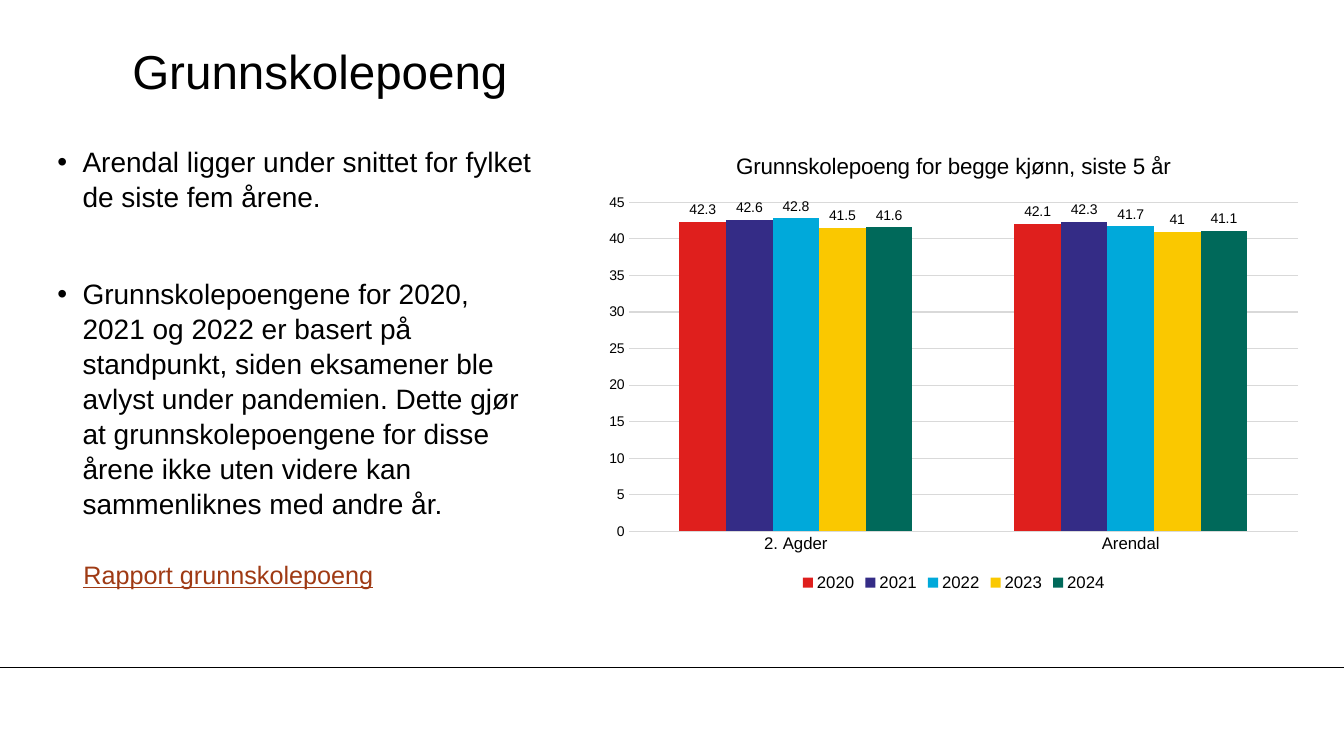
from lxml.etree import SubElement
from pptx import Presentation
from pptx.chart.data import CategoryChartData
from pptx.dml.color import RGBColor
from pptx.enum.chart import XL_CHART_TYPE, XL_LABEL_POSITION, XL_LEGEND_POSITION, XL_TICK_MARK
from pptx.enum.shapes import MSO_CONNECTOR
from pptx.enum.text import MSO_ANCHOR
from pptx.oxml.ns import qn
from pptx.util import Pt

FONT = "Arial"
COLOURS = {"text": "000000", "link": "9F3A14", "grid": "D9D9D9"}
YEARS = {
    "2020": ("DF1F1D", (42.3, 42.1)),
    "2021": ("342C86", (42.6, 42.3)),
    "2022": ("00A9DA", (42.8, 41.7)),
    "2023": ("FAC800", (41.5, 41)),
    "2024": ("00695A", (41.6, 41.1)),
}
BULLETS = (
    "Arendal ligger under snittet for fylket de siste fem årene.",
    "Grunnskolepoengene for 2020, 2021 og 2022 er basert på standpunkt, siden "
    "eksamener ble avlyst under pandemien. Dette gjør at grunnskolepoengene for "
    "disse årene ikke uten videre kan sammenliknes med andre år.",
)


def style_font(font, size, colour="text"):
    """Set the typeface, size and colour of a font."""
    font.name = FONT
    font.size = Pt(size)
    font.color.rgb = RGBColor.from_string(COLOURS[colour])


def style_line(line):
    """Give a chart line the thin grid colour."""
    line.color.rgb = RGBColor.from_string(COLOURS["grid"])
    line.width = Pt(0.75)


def add_box(page, left, top, width, height, margins=(0, 0)):
    """Add a wrapping text box with horizontal and vertical margins."""
    frame = page.shapes.add_textbox(Pt(left), Pt(top), Pt(width), Pt(height)).text_frame
    frame.word_wrap = True
    frame.margin_left = frame.margin_right = Pt(margins[0])
    frame.margin_top = frame.margin_bottom = Pt(margins[1])
    return frame


def add_span(para, text, size, colour="text"):
    """Add one styled run to a paragraph."""
    span = para.add_run()
    span.text = text
    style_font(span.font, size, colour)
    return span


def add_bullets(frame, texts):
    """Fill a text frame with widely spaced bullet paragraphs."""
    for index, text in enumerate(texts):
        para = frame.add_paragraph() if index else frame.paragraphs[0]
        properties = para._p.get_or_add_pPr()
        properties.set("marL", str(Pt(18)))
        properties.set("indent", str(Pt(-18)))
        SubElement(properties, qn("a:buFont")).set("typeface", FONT)
        SubElement(properties, qn("a:buChar")).set("char", "•")
        para.line_spacing = 1.04
        if index:
            para.space_before = Pt(44.5)
        add_span(para, text, 20)


def add_rule(page, top, width):
    """Draw a thin horizontal line across the page."""
    rule = page.shapes.add_connector(MSO_CONNECTOR.STRAIGHT, 0, Pt(top), Pt(width), Pt(top))
    rule.line.color.rgb = RGBColor.from_string(COLOURS["text"])
    rule.line.width = Pt(0.75)
    SubElement(rule._element.spPr, qn("a:effectLst"))


def add_score_chart(page, left, top, width, height):
    """Add the clustered column chart of scores by year."""
    data = CategoryChartData()
    data.categories = ("2. Agder", "Arendal")
    for year, (_, scores) in YEARS.items():
        data.add_series(year, scores)
    chart = page.shapes.add_chart(
        XL_CHART_TYPE.COLUMN_CLUSTERED, Pt(left), Pt(top), Pt(width), Pt(height), data
    ).chart
    style_font(chart.font, 10)
    title = chart.chart_title.text_frame.paragraphs[0]
    add_span(title, "Grunnskolepoeng for begge kjønn, siste 5 år", 16).font.bold = False
    chart.has_legend = True
    chart.legend.position = XL_LEGEND_POSITION.BOTTOM
    chart.legend.include_in_layout = False
    style_font(chart.legend.font, 12)
    style_axes(chart)
    style_columns(chart.plots[0])


def style_axes(chart):
    """Style the category axis, value axis and gridlines."""
    for axis, size in ((chart.category_axis, 12), (chart.value_axis, 10)):
        axis.major_tick_mark = axis.minor_tick_mark = XL_TICK_MARK.NONE
        style_font(axis.tick_labels.font, size)
    style_line(chart.category_axis.format.line)
    values = chart.value_axis
    values.minimum_scale, values.maximum_scale, values.major_unit = 0, 45, 5
    values.format.line.fill.background()
    style_line(values.major_gridlines.format.line)


def style_columns(plot):
    """Colour each year's columns and show their values."""
    plot.gap_width = 219
    plot.overlap = 0
    plot.vary_by_categories = False
    for series in plot.series:
        series.format.fill.solid()
        series.format.fill.fore_color.rgb = RGBColor.from_string(YEARS[series.name][0])
        labels = series.data_labels
        labels.show_value = True
        labels.position = XL_LABEL_POSITION.OUTSIDE_END
        style_font(labels.font, 10)


def main():
    """Build and save the slide."""
    deck = Presentation()
    deck.slide_width, deck.slide_height = Pt(960), Pt(540)
    page = deck.slides.add_slide(deck.slide_layouts[6])
    add_rule(page, 476.5, 960)
    heading = add_box(page, 94.5, 23, 799, 54)
    heading.vertical_anchor = MSO_ANCHOR.MIDDLE
    add_span(heading.paragraphs[0], "Grunnskolepoeng", 34)
    add_bullets(add_box(page, 41, 102.5, 340, 293.5), BULLETS)
    link = add_box(page, 52.5, 396, 237.5, 29, (7.2, 3.6))
    add_span(link.paragraphs[0], "Rapport grunnskolepoeng", 18, "link").font.underline = True
    add_score_chart(page, 425, 95, 512.5, 330.5)
    deck.save("out.pptx")


if __name__ == "__main__":
    main()
